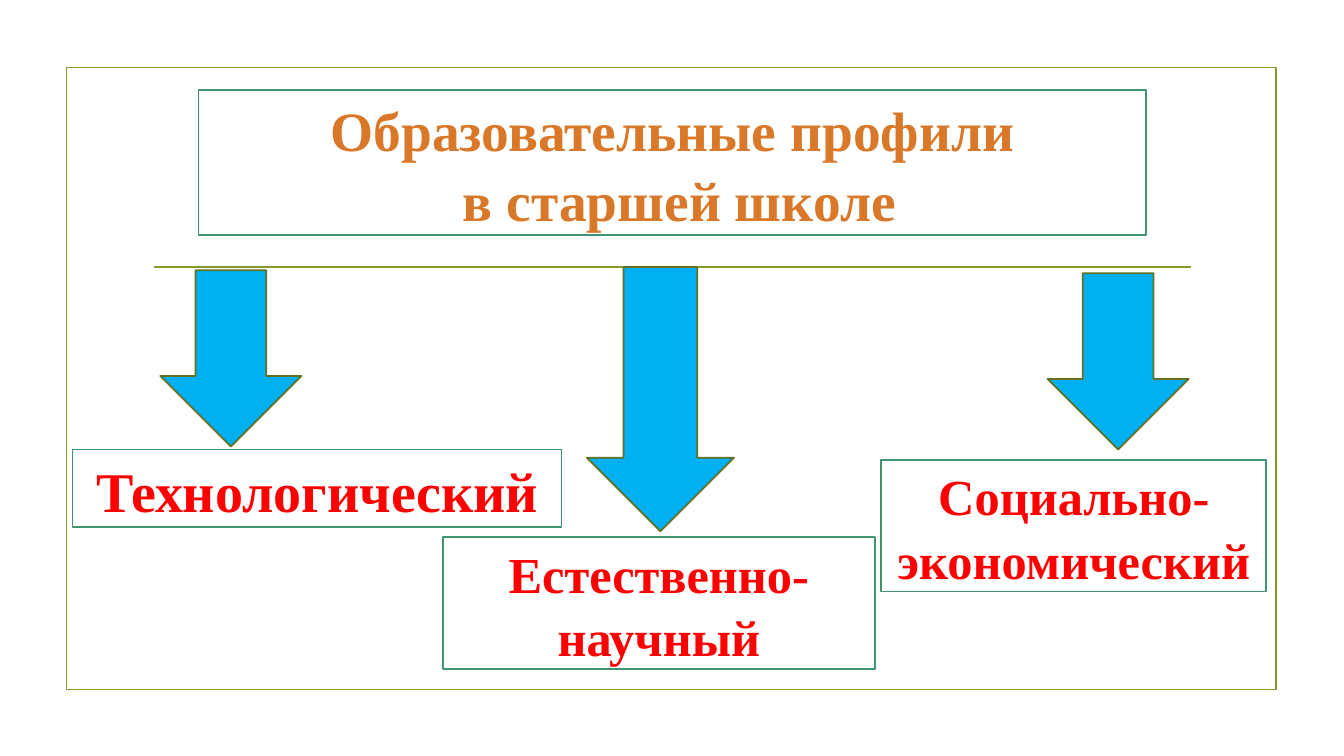
from pptx import Presentation
from pptx.dml.color import RGBColor
from pptx.enum.shapes import MSO_CONNECTOR as Link, MSO_SHAPE as Kind
from pptx.enum.text import MSO_ANCHOR as Anchor, PP_ALIGN as Align
from pptx.oxml.ns import qn
from pptx.util import Emu, Pt

SCALE = 9144  # EMU in one px, 100 px to the inch
OLIVE, GREEN, MOSS = "83992A", "3C9770", "61711F"
WHITE, BLUE, RED, ORANGE = "FFFFFF", "00B0F0", "FF0000", "D97828"


def px(*nums):
    return [Emu(n * SCALE) for n in nums]


def color(code):
    return RGBColor.from_string(code)


def write(shape, text, size=36, ink=RED, face="Times New Roman"):
    frame = shape.text_frame
    frame.word_wrap = True
    frame.vertical_anchor = Anchor.MIDDLE
    frame.text = text
    for para in frame.paragraphs:
        para.alignment = Align.CENTER
        para.line_spacing = 1.05
        for run in para.runs:
            font = run.font
            font.name, font.size, font.bold = face, Pt(size), True
            font.color.rgb = color(ink)


class Board:
    def __init__(self, slide, width=1.25):
        self.items = slide.shapes
        self.width = Pt(width)

    def stroke(self, item, code):
        item.line.color.rgb = color(code)
        item.line.width = self.width

    def shape(self, kind, area, line, fill=None):
        item = self.items.add_shape(kind, *px(*area))
        item.shadow.inherit = False
        if fill:
            item.fill.solid()
            item.fill.fore_color.rgb = color(fill)
        else:
            item.fill.background()
        self.stroke(item, line)
        return item

    def frame(self, *area):
        return self.shape(Kind.RECTANGLE, area, OLIVE)

    def rule(self, *ends):
        item = self.items.add_connector(Link.STRAIGHT, *px(*ends))
        props = item._element.spPr
        self.stroke(item, OLIVE)
        props.append(props.makeelement(qn("a:effectLst"), {}))

    def arrow(self, *area):
        return self.shape(Kind.DOWN_ARROW, area, MOSS, BLUE)

    def label(self, area, text, **style):
        write(self.shape(Kind.RECTANGLE, area, GREEN, WHITE), text, **style)


def main():
    deck = Presentation()
    deck.slide_width, deck.slide_height = px(1333, 750)
    board = Board(deck.slides.add_slide(deck.slide_layouts[6]))

    # Border and dividing line
    board.frame(66, 67, 1200, 617)
    board.rule(153, 265, 1181, 265)

    # Heading
    board.label((197, 89, 940, 144),
                "Образовательные профили\v в старшей школе",
                size=39.6, ink=ORANGE)

    # Arrows to the profiles
    board.arrow(159, 268, 140, 175)
    board.arrow(582, 265, 146, 262)
    board.arrow(1039, 271, 140, 175)

    # Profiles
    board.label((72, 446, 485, 77), "Технологический", size=40)
    board.label((439, 533, 429, 131), "Естественно- научный")
    board.label((874, 456, 382, 131), "Социально-\nэкономический")

    deck.save("out.pptx")


if __name__ == "__main__":
    main()
